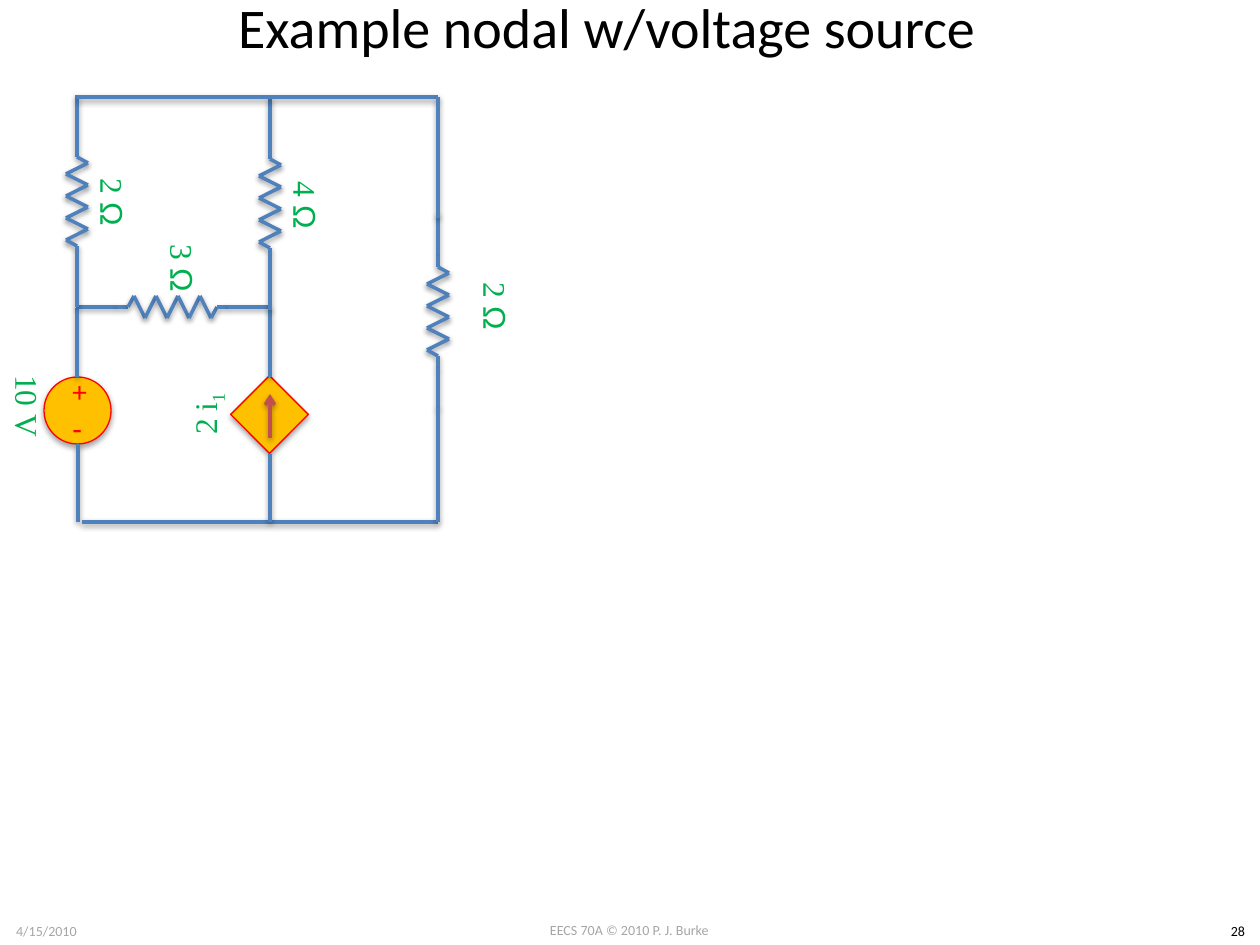
from itertools import pairwise

from lxml.etree import SubElement
from pptx import Presentation
from pptx.dml.color import RGBColor
from pptx.enum.shapes import MSO_CONNECTOR, MSO_SHAPE
from pptx.enum.text import MSO_ANCHOR, PP_ALIGN
from pptx.oxml.ns import qn
from pptx.util import Emu, Pt

PX_PER_INCH = 126
WIRE, ARROW, SOURCE, RED, GREEN = "4F81BD", "C0504D", "FFC000", "FF0000", "00B050"
BLACK, GRAY = "000000", "A6A6A6"
BODY_LENGTH, ZIG_PITCH, ZIG_REACH = 89, 11, 11


def px(length):
    return Emu(round(length * 914400 / PX_PER_INCH))


def rgb(color):
    return RGBColor.from_string(color)


class CircuitSlide:
    """Draws circuit elements on one slide; new ones go to the open group."""

    def __init__(self, slide):
        self.slide = slide
        self.canvas = slide.shapes

    def open_group(self):
        self.canvas = self.slide.shapes.add_group_shape().shapes

    def close_group(self):
        self.canvas = self.slide.shapes

    def shadow(self, element, distance, opacity):
        effects = SubElement(element._element.spPr, qn("a:effectLst"))
        outer = SubElement(effects, qn("a:outerShdw"), blurRad="40000",
                           dist=str(distance), dir="5400000", rotWithShape="0")
        color = SubElement(outer, qn("a:srgbClr"), val=BLACK)
        SubElement(color, qn("a:alpha"), val=str(opacity * 1000))

    def wire(self, start, end, color=WIRE, arrow=False):
        wire = self.canvas.add_connector(
            MSO_CONNECTOR.STRAIGHT, *map(px, (*start, *end)))
        wire.line.color.rgb = rgb(color)
        wire.line.width = Pt(2)
        if arrow:
            SubElement(wire._element.spPr.find(qn("a:ln")), qn("a:tailEnd"),
                       type="arrow")
        self.shadow(wire, 20000, 38)

    def resistor(self, x, y, before, after, horizontal=False):
        """Zigzag body from (x, y); before and after are lead stops measured
        from the two ends of the body."""
        zigzag = [(6 + ZIG_PITCH * k, ZIG_REACH * (-1) ** k) for k in range(8)]
        route = [*((stop, 0) for stop in before), (0, 0), *zigzag,
                 (BODY_LENGTH, 0), *((BODY_LENGTH + stop, 0) for stop in after)]
        if horizontal:
            points = [(x + along, y - across) for along, across in route]
        else:
            points = [(x + across, y + along) for along, across in route]
        for start, end in pairwise(points):
            self.wire(start, end)

    def source(self, preset, x, y, size, rotation=0):
        source = self.canvas.add_shape(preset, *map(px, (x, y, size, size)))
        source.rotation = rotation
        source.fill.solid()
        source.fill.fore_color.rgb = rgb(SOURCE)
        source.line.color.rgb = rgb(RED)
        source.line.width = Pt(0.75)
        self.shadow(source, 23000, 35)

    def text(self, box, words, size, color, font="Calibri",
             anchor=MSO_ANCHOR.MIDDLE, wrap=True):
        text = self.canvas.add_textbox(*map(px, box))
        frame = text.text_frame
        frame.word_wrap = wrap
        frame.vertical_anchor = anchor
        paragraph = frame.paragraphs[0]
        paragraph.alignment = PP_ALIGN.CENTER
        for word in words:
            run = paragraph.add_run()
            run.text = word
            run.font.size = Pt(size)
            run.font.name = "Arial" if word == "Ω" else font
            run.font.color.rgb = rgb(color)
        return text

    def label(self, center_x, center_y, *words, rotation=90):
        label = self.text((center_x - 75, center_y - 46, 150, 92), words,
                          18, GREEN, "Times New Roman")
        label.rotation = rotation
        return label

    def footer(self, box, words, color=GRAY):
        self.text(box, [words], 8, color, anchor=MSO_ANCHOR.TOP, wrap=False)

    def title(self, words):
        title = self.slide.shapes.title
        title.left, title.top, title.width, title.height = map(
            px, (40, -38, 1134, 129))
        frame = title.text_frame
        frame.text = words
        frame.vertical_anchor = MSO_ANCHOR.MIDDLE
        paragraph = frame.paragraphs[0]
        paragraph.alignment = PP_ALIGN.CENTER
        font = paragraph.runs[0].font
        font.size, font.name, font.color.rgb = Pt(32), "Calibri", rgb(BLACK)


def main():
    deck = Presentation()
    deck.slide_width, deck.slide_height = px(1260), px(945)
    circuit = CircuitSlide(deck.slides.add_slide(deck.slide_layouts[5]))
    left, middle, right = 77, 270, 438
    top, node, bottom = 97, 308, 522

    circuit.footer((483, 915, 293, 30), "EECS 70A © 2010 P. J. Burke")
    circuit.footer((0, 916, 93, 30), "4/15/2010")
    circuit.footer((1216, 916, 44, 30), "28", BLACK)
    circuit.title("Example nodal w/voltage source")

    circuit.open_group()
    circuit.resistor(right, 267, (-54, -11), (12, 53))
    circuit.open_group()
    circuit.resistor(128, 307, (-52, -11), (11, 53), horizontal=True)
    circuit.close_group()
    circuit.label(496, 306, "2 ", "Ω")
    circuit.label(183, 268, "3 ", "Ω")

    circuit.open_group()
    circuit.source(MSO_SHAPE.OVAL, 44, 377, 67)
    circuit.text((60, 370, 33, 42), "+", 16.6, RED)
    circuit.text((60, 407, 33, 42), "-", 18, RED)
    circuit.wire((left + 1, bottom), (left + 1, 444))
    circuit.wire((left, 377), (left, node))

    circuit.open_group()
    circuit.label(113, 202, "2 ", "Ω")
    circuit.resistor(left, 157, (-62,), (61,))
    circuit.close_group()
    circuit.wire((82, bottom), (right, bottom))

    circuit.open_group()
    circuit.source(MSO_SHAPE.RECTANGLE, 242, 387, 55, rotation=45)
    circuit.wire((middle, 377), (middle, node))
    circuit.wire((middle, bottom), (middle, 454))
    circuit.wire((middle, 438), (middle, 394), ARROW, arrow=True)
    current = circuit.label(207, 414, "2 i", "1", rotation=270)
    subscript = current.text_frame.paragraphs[0].runs[1]
    subscript.font._element.set("baseline", "-25000")

    circuit.open_group()
    circuit.label(306, 205, "4 ", "Ω")
    circuit.resistor(middle, 159, (-62,), (62,))
    circuit.close_group()

    circuit.wire((left, top), (right, top))
    circuit.wire((right, 218), (right, top))
    circuit.wire((right, 407), (right, bottom))
    circuit.label(28, 406, "10 V")
    deck.save("out.pptx")


if __name__ == "__main__":
    main()
